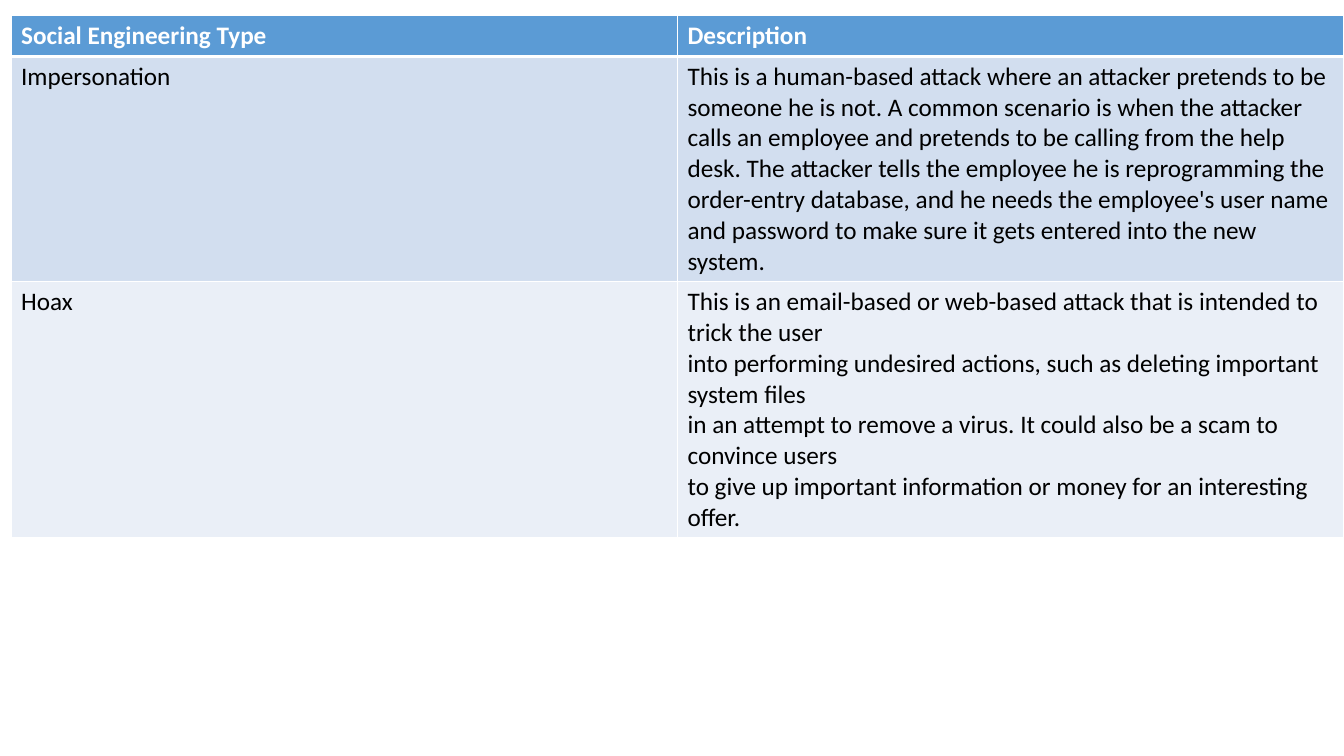
import pptx
import pptx.dml.color
import pptx.oxml.ns
import pptx.util
import lxml.etree
from dataclasses import dataclass
from pptx.util import Inches


@dataclass(frozen=True)
class Theme:
    font: str = "Calibri"
    size: int = 18
    header_fill: str = "5B9BD5"
    header_text: str = "FFFFFF"
    body_fills: tuple = ("D2DEEF", "EAEFF7")
    body_text: str = "000000"
    border: str = "FFFFFF"
    thin: int = 1
    thick: int = 3


theme = Theme()


def add_border(cell, side, width):
    properties = cell._tc.get_or_add_tcPr()
    line = lxml.etree.SubElement(
        properties, pptx.oxml.ns.qn(f"a:ln{side}"), w=str(pptx.util.Pt(width)))
    fill = lxml.etree.SubElement(line, pptx.oxml.ns.qn("a:solidFill"))
    lxml.etree.SubElement(fill, pptx.oxml.ns.qn("a:srgbClr"), val=theme.border)


# Each cell is a list of paragraphs
rows = [
    (["Social Engineering Type"], ["Description"]),
    (["Impersonation"],
     ["This is a human-based attack where an attacker pretends to be someone he is not. "
      "A common scenario is when the attacker calls an employee and pretends to be calling "
      "from the help desk. The attacker tells the employee he is reprogramming the "
      "order-entry database, and he needs the employee's user name and password to make "
      "sure it gets entered into the new system."]),
    (["Hoax"],
     ["This is an email-based or web-based attack that is intended to trick the user",
      "into performing undesired actions, such as deleting important system files",
      "in an attempt to remove a virus. It could also be a scam to convince users",
      "to give up important information or money for an interesting offer."]),
]
row_heights = [0.41, 2.23, 2.47]
column_width = 6.61

# Page
deck = pptx.Presentation()
deck.slide_width, deck.slide_height = Inches(13.33), Inches(7.5)
page = deck.slides.add_slide(deck.slide_layouts[6])

# Table frame
table = page.shapes.add_table(
    len(rows), 2, Inches(0.11), Inches(0.15),
    Inches(2 * column_width), Inches(sum(row_heights))).table
for column in table.columns:
    column.width = Inches(column_width)
for table_row, height in zip(table.rows, row_heights):
    table_row.height = Inches(height)

# Cells: borders, fill and text
for row_index, row in enumerate(rows):
    is_header = row_index == 0
    fill_color = theme.header_fill if is_header else theme.body_fills[row_index - 1]
    text_color = theme.header_text if is_header else theme.body_text
    widths = {"L": theme.thin, "R": theme.thin,
              "T": theme.thick if row_index == 1 else theme.thin,
              "B": theme.thick if is_header else theme.thin}
    for column_index, paragraphs in enumerate(row):
        cell = table.cell(row_index, column_index)
        for side, width in widths.items():
            add_border(cell, side, width)
        cell.fill.solid()
        cell.fill.fore_color.rgb = pptx.dml.color.RGBColor.from_string(fill_color)
        for index, text in enumerate(paragraphs):
            frame = cell.text_frame
            para = frame.add_paragraph() if index else frame.paragraphs[0]
            span = para.add_run()
            span.text = text
            span.font.name = theme.font
            span.font.size = pptx.util.Pt(theme.size)
            span.font.bold = is_header
            span.font.color.rgb = pptx.dml.color.RGBColor.from_string(text_color)

deck.save("out.pptx")
